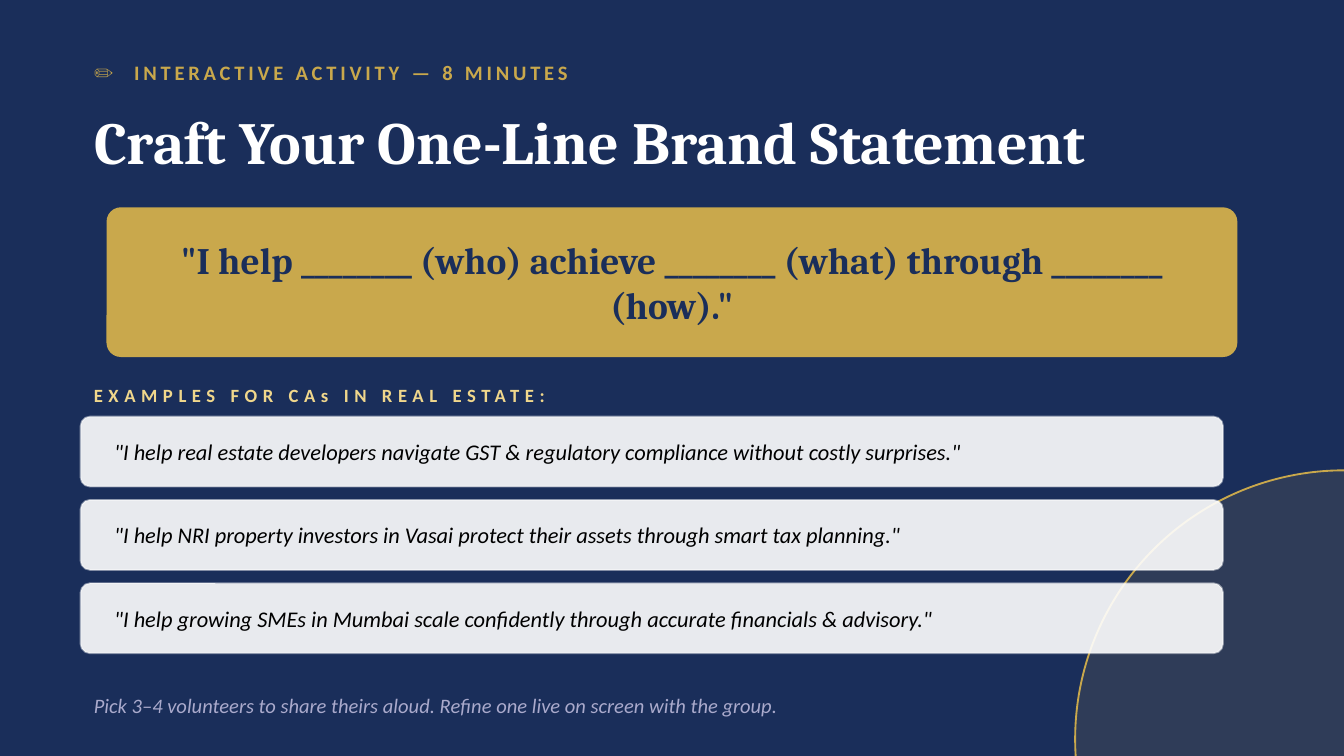
"""Build the brand statement activity slide."""
from pptx import Presentation
from pptx.dml.color import RGBColor
from pptx.enum.shapes import MSO_SHAPE
from pptx.enum.text import MSO_ANCHOR, MSO_AUTO_SIZE, PP_ALIGN
from pptx.oxml.ns import qn
from pptx.util import Pt
from lxml.etree import SubElement

COLORS = {
    "navy": "1A2E5A", "gold": "C9A84C", "pale": "F0D78C",
    "white": "FFFFFF", "black": "000000", "lilac": "AAAACC",
}


def write(box, text, size, color, font="Calibri", bold=False, italic=False,
          align=PP_ALIGN.LEFT, track=0):
    frame = box.text_frame
    frame.text = text
    frame.word_wrap = True
    frame.auto_size = MSO_AUTO_SIZE.NONE
    frame.vertical_anchor = MSO_ANCHOR.MIDDLE
    para = frame.paragraphs[0]
    para.alignment = align
    run = para.runs[0]
    run.font.name = font
    run.font.size = Pt(size)
    run.font.bold = bold
    run.font.italic = italic
    run.font.color.rgb = RGBColor.from_string(COLORS[color])
    if track:
        run.font._element.set("spc", str(track * 100))


def draw(kind, left, top, width, height, color, alphas=(100, 100), radius=0):
    shape = slide.shapes.add_shape(kind, Pt(left), Pt(top), Pt(width), Pt(height))
    shape.shadow.inherit = False
    if radius:
        shape.adjustments[0] = radius / height
    shape.fill.solid()
    shape.fill.fore_color.rgb = RGBColor.from_string(COLORS[color])
    shape.line.color.rgb = RGBColor.from_string(COLORS[color])
    shape.line.width = Pt(1)
    for node, alpha in zip(shape.element.spPr.iter(qn("a:srgbClr")), alphas):
        if alpha < 100:
            SubElement(node, qn("a:alpha")).set("val", str(alpha * 1000))
    return shape


deck = Presentation()
deck.slide_width, deck.slide_height = Pt(720), Pt(405)
slide = deck.slides.add_slide(deck.slide_layouts[5])
slide.background.fill.solid()
slide.background.fill.fore_color.rgb = RGBColor.from_string(COLORS["navy"])

left, width = 43.2, 612
draw(MSO_SHAPE.OVAL, 576, 252, 288, 288, "gold", alphas=(12, 100))

title = slide.shapes.title
title.left, title.top, title.width, title.height = Pt(left), Pt(50.4), Pt(width), Pt(50.4)
write(title, "Craft Your One-Line Brand Statement", 32, "white", "Cambria", bold=True)

banner = draw(MSO_SHAPE.ROUNDED_RECTANGLE, 57.6, 111.6, 604.8, 79.2, "gold", radius=7.2)
write(banner, '"I help ________ (who) achieve ________ (what) through ________ (how)."',
      20, "navy", "Cambria", bold=True, align=PP_ALIGN.CENTER)

labels = [
    (27.36, 23.04, "✏️  INTERACTIVE ACTIVITY — 8 MINUTES", 11, "gold", True, 2),
    (201.6, 20.16, "EXAMPLES FOR CAs IN REAL ESTATE:", 10, "pale", True, 3),
    (367.2, 21.6, "Pick 3–4 volunteers to share theirs aloud. "
     "Refine one live on screen with the group.", 11, "lilac", False, 0),
]
for top, height, text, size, color, bold, track in labels:
    box = slide.shapes.add_textbox(Pt(left), Pt(top), Pt(width), Pt(height))
    write(box, text, size, color, bold=bold, italic=not bold, track=track)

quotes = [
    '"I help real estate developers navigate GST & regulatory compliance without costly surprises."',
    '"I help NRI property investors in Vasai protect their assets through smart tax planning."',
    '"I help growing SMEs in Mumbai scale confidently through accurate financials & advisory."',
]
for row, quote in enumerate(quotes):
    card = draw(MSO_SHAPE.ROUNDED_RECTANGLE, left, 223.2 + row * 44.64, width, 37.44,
                "white", alphas=(90, 45), radius=5.04)
    card.text_frame.margin_left = Pt(16.5)
    write(card, quote, 12, "black", italic=True)

deck.save("out.pptx")
